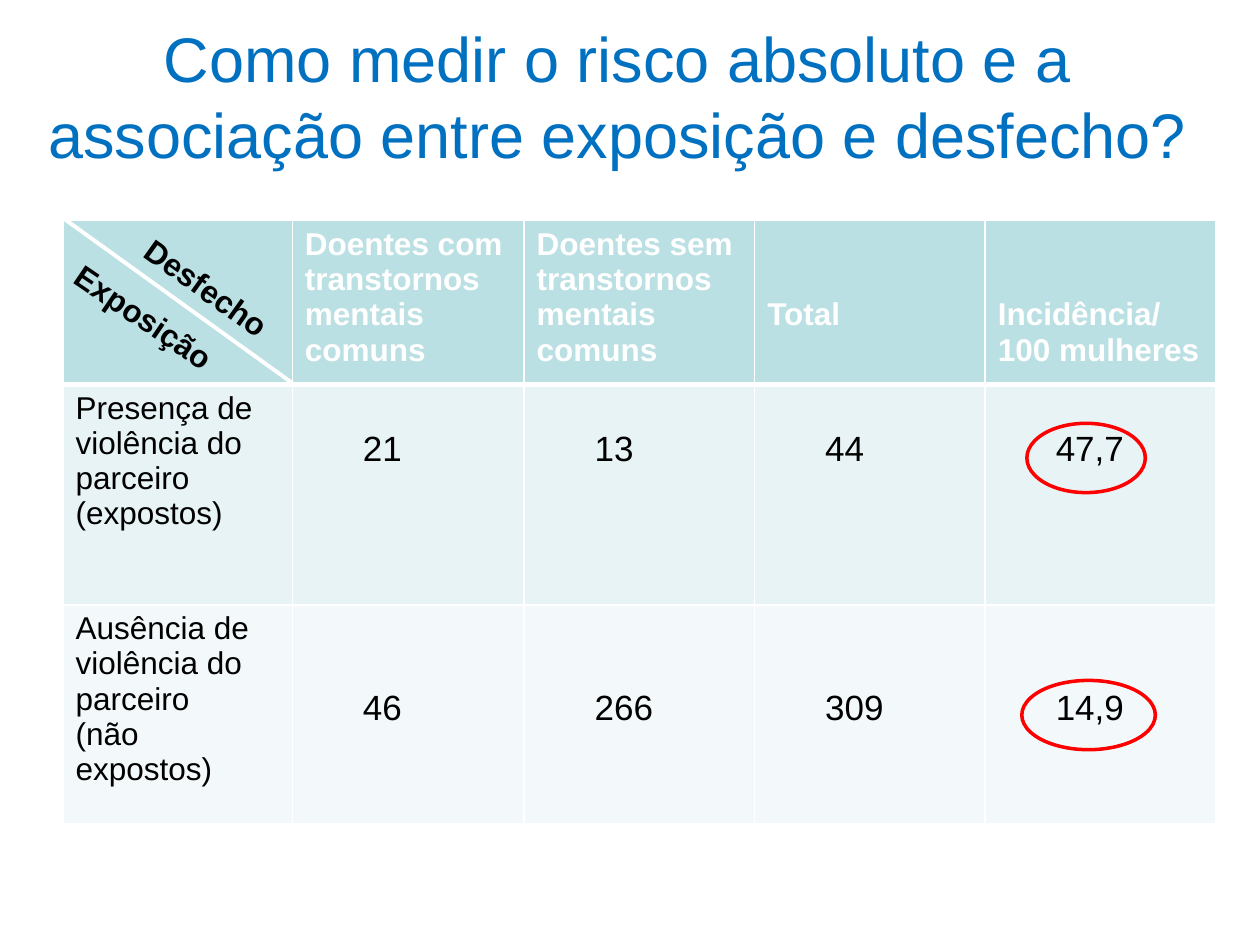
import pptx
import pptx.dml.color
import pptx.enum.shapes
import pptx.enum.text
import pptx.oxml
import pptx.oxml.ns
import pptx.util

Inches = pptx.util.Inches
Pt = pptx.util.Pt

COLORS = {
    "title": "0070C0",
    "text": "000000",
    "white": "FFFFFF",
    "header": "BBE0E3",
    "exposed": "E7F3F4",
    "unexposed": "F3F9FA",
    "highlight": "FF0000",
}
FONT = "Arial"
COLUMN_WIDTHS = [1.82, 1.84, 1.83, 1.83, 1.83]
ROW_HEIGHTS = [1.3, 1.75, 1.74]
ROW_FILLS = ["header", "exposed", "unexposed"]
NUMBER_TOPS = [0.36, 0.67]
ROWS = [
    ["", "Doentes com transtornos mentais comuns",
     "Doentes sem transtornos mentais comuns", "Total",
     "Incidência/ 100 mulheres"],
    ["Presença de violência do parceiro\n(expostos)", "21", "13", "44", "47,7"],
    ["Ausência de violência do parceiro\n(não expostos)",
     "46", "266", "309", "14,9"],
]


def rgb(name):
    return pptx.dml.color.RGBColor.from_string(COLORS[name])


def write_text(frame, text, size=18, color="text", bold=False, align=None):
    """Fill a text frame, one paragraph for each line of text."""
    frame.word_wrap = True
    for index, line in enumerate(text.split("\n")):
        paragraph = frame.paragraphs[0] if index == 0 else frame.add_paragraph()
        paragraph.alignment = align
        run = paragraph.add_run()
        run.text = line
        run.font.name = FONT
        run.font.size = Pt(size)
        run.font.bold = bold
        run.font.color.rgb = rgb(color)


def set_borders(cell, bottom=1):
    properties = cell._tc.get_or_add_tcPr()
    for side, width in (("L", 1), ("R", 1), ("T", 1), ("B", bottom)):
        properties.append(pptx.oxml.parse_xml(
            f'<a:ln{side} {pptx.oxml.ns.nsdecls("a")} w="{Pt(width)}">'
            f'<a:solidFill><a:srgbClr val="{COLORS["white"]}"/></a:solidFill>'
            f'</a:ln{side}>'))


def add_title(slide, text):
    title = slide.shapes.title
    title.left, title.top = Inches(0.15), Inches(0.13)
    title.width, title.height = Inches(9.5), Inches(1.25)
    title.text_frame.vertical_anchor = pptx.enum.text.MSO_ANCHOR.MIDDLE
    write_text(title.text_frame, text, size=36, color="title",
               align=pptx.enum.text.PP_ALIGN.CENTER)


def fill_cell(cell, text, row, column):
    is_header = row == 0
    is_number = not is_header and column > 0
    set_borders(cell, bottom=3 if is_header else 1)
    cell.fill.solid()
    cell.fill.fore_color.rgb = rgb(ROW_FILLS[row])
    if is_number:
        cell.margin_left = Inches(0.56)
        cell.margin_top = Inches(NUMBER_TOPS[row - 1])
    elif is_header and column >= 3:
        cell.margin_top = Inches(0.61)
    if text:
        write_text(cell.text_frame, text, size=20 if is_number else 18,
                   color="white" if is_header else "text", bold=is_header)


def add_risk_table(slide):
    table = slide.shapes.add_table(
        len(ROWS), len(COLUMN_WIDTHS), Inches(0.5), Inches(1.75),
        Inches(sum(COLUMN_WIDTHS)), Inches(sum(ROW_HEIGHTS))).table
    for column, width in zip(table.columns, COLUMN_WIDTHS):
        column.width = Inches(width)
    for row, height in zip(table.rows, ROW_HEIGHTS):
        row.height = Inches(height)
    for row, texts in enumerate(ROWS):
        for column, text in enumerate(texts):
            fill_cell(table.cell(row, column), text, row, column)


def add_header_diagonal(slide):
    line = slide.shapes.add_connector(
        pptx.enum.shapes.MSO_CONNECTOR.STRAIGHT,
        Inches(0.5), Inches(1.73), Inches(2.32), Inches(3.04))
    line.line.color.rgb = rgb("white")
    line.line.width = Pt(2.25)
    line._element.spPr.append(pptx.oxml.parse_xml(
        f'<a:effectLst {pptx.oxml.ns.nsdecls("a")}/>'))


def add_highlight(slide, left, top, width):
    ellipse = slide.shapes.add_shape(
        pptx.enum.shapes.MSO_SHAPE.OVAL,
        Inches(left), Inches(top), Inches(width), Inches(0.55))
    ellipse.shadow.inherit = False
    ellipse.fill.background()
    ellipse.line.color.rgb = rgb("highlight")
    ellipse.line.width = Pt(2)


def add_slanted_label(slide, text, left, top, width, rotation):
    box = slide.shapes.add_textbox(
        Inches(left), Inches(top), Inches(width), Inches(0.4))
    box.rotation = rotation
    box.text_frame.auto_size = pptx.enum.text.MSO_AUTO_SIZE.SHAPE_TO_FIT_TEXT
    write_text(box.text_frame, text, bold=True)


def main():
    presentation = pptx.Presentation()
    presentation.slide_width = Inches(10)
    presentation.slide_height = Inches(7.5)
    slide = presentation.slides.add_slide(presentation.slide_layouts[5])
    add_title(slide, "Como medir o risco absoluto e a associação "
                     "entre exposição e desfecho?")
    add_risk_table(slide)
    add_header_diagonal(slide)
    add_highlight(slide, 8.15, 3.36, 0.94)
    add_highlight(slide, 8.11, 5.4, 1.06)
    add_slanted_label(slide, "Exposição", 0.4, 2.37, 1.65, 34.2)
    add_slanted_label(slide, "Desfecho", 0.97, 2.11, 1.42, 35.5)
    presentation.save("out.pptx")


if __name__ == "__main__":
    main()
